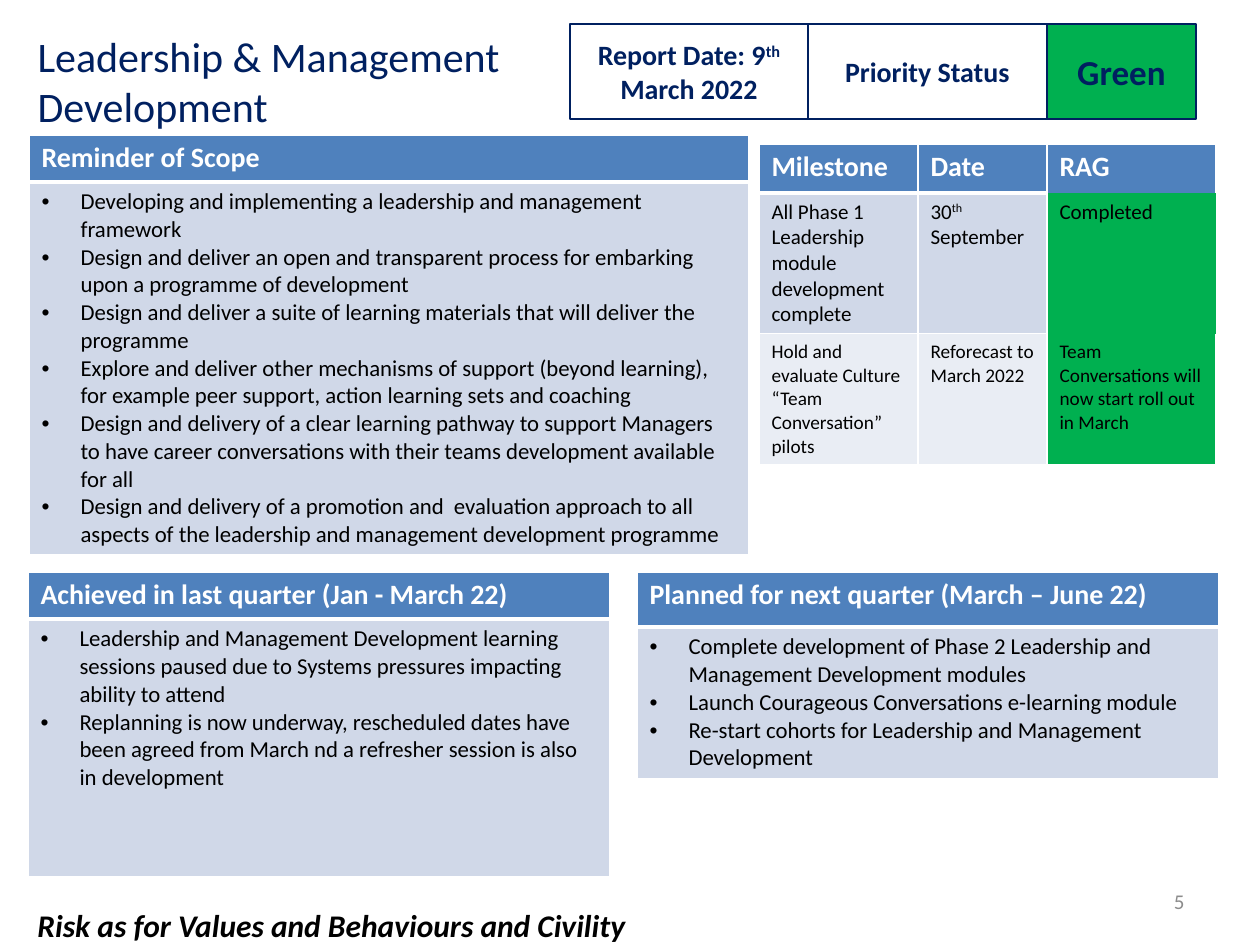
import pptx
import pptx.util
import pptx.dml.color
import pptx.enum.shapes
import pptx.enum.text
import pptx.oxml.ns
import lxml.etree

ALIGN = pptx.enum.text.PP_ALIGN
ANCHOR = pptx.enum.text.MSO_ANCHOR
COLOR = pptx.dml.color.RGBColor.from_string

THEME = {
    "font": "Calibri",
    "navy": "002060", "blue": "4F81BD", "band": "D0D8E8", "pale": "E9EDF4",
    "green": "00B050", "white": "FFFFFF", "black": "000000", "grey": "8C8C8C",
    "title": {"size": 24, "bold": False, "color": "navy"},
    "status": {"size": 16, "bold": True, "color": "navy"},
    "rating": {"size": 20, "bold": True, "color": "navy"},
    "header": {"size": 16, "bold": True, "color": "white"},
    "body": {"size": 13, "bold": False, "color": "black"},
    "milestone": {"size": 12, "bold": False, "color": "black"},
    "milestone_small": {"size": 11, "bold": False, "color": "black"},
    "number": {"size": 12, "bold": False, "color": "grey"},
    "risk": {"size": 18, "bold": True, "italic": True, "color": "black"},
}
INDENT = 39
FULL = {"L": 1, "R": 1, "T": 1, "B": 1}
HEADER_EDGE = {**FULL, "B": 3}
BODY_EDGE = {**FULL, "T": 3}

SCOPE = [
    "Developing and implementing a leadership and management framework",
    "Design and deliver an open and transparent process for embarking upon a programme of development",
    "Design and deliver a suite of learning materials that will deliver the programme",
    "Explore and deliver other mechanisms of support (beyond learning), for example peer support, action learning sets and coaching",
    "Design and delivery of a clear learning pathway to support Managers to have career conversations with their teams development available for all",
    "Design and delivery of a promotion and  evaluation approach to all aspects of the leadership and management development programme",
]
ACHIEVED = [
    "Leadership and Management Development learning sessions paused due to Systems pressures impacting ability to attend",
    "Replanning is now underway, rescheduled dates have been agreed from March nd a refresher session is also in development",
]
PLANNED = [
    "Complete development of Phase 2 Leadership and Management Development modules",
    "Launch Courageous Conversations e-learning module",
    "Re-start cohorts for Leadership and Management Development",
]


def px(n):
    return pptx.util.Emu(round(n * 914400 / 126))


def set_attrs(obj, values):
    for name, value in values.items():
        setattr(obj, name, value)


def sub(parent, tag, **attrs):
    return lxml.etree.SubElement(parent, pptx.oxml.ns.qn(tag), **attrs)


def write(tf, lines, style, align=ALIGN.LEFT, bullets=False):
    fmt = THEME[style]
    for i, line in enumerate(lines):
        p = tf.add_paragraph() if i else tf.paragraphs[0]
        p.alignment = align
        if bullets:
            ppr = p._p.get_or_add_pPr()
            ppr.set("marL", str(px(INDENT)))
            ppr.set("indent", str(-px(INDENT)))
            sub(ppr, "a:buFont", typeface="Arial")
            sub(ppr, "a:buChar", char="•")
        for j, part in enumerate(line.split("^")):
            r = p.add_run()
            r.text = part
            set_attrs(r.font, {
                "name": THEME["font"], "size": pptx.util.Pt(fmt["size"]),
                "bold": fmt["bold"], "italic": fmt.get("italic", False)})
            r.font.color.rgb = COLOR(THEME[fmt["color"]])
            if j % 2:
                r._r.get_or_add_rPr().set("baseline", "30000")


def add_title(s, box, lines):
    sp = s.shapes.title
    set_attrs(sp, dict(zip(("left", "top", "width", "height"), map(px, box))))
    set_attrs(sp.text_frame, {
        "vertical_anchor": ANCHOR.TOP, "word_wrap": True,
        "auto_size": pptx.enum.text.MSO_AUTO_SIZE.NONE})
    write(sp.text_frame, lines, "title")


def add_text(s, box, text, style, align=ALIGN.LEFT, anchor=ANCHOR.TOP, wrap=True):
    tf = s.shapes.add_textbox(*map(px, box)).text_frame
    set_attrs(tf, {"word_wrap": wrap, "vertical_anchor": anchor})
    write(tf, [text], style, align)


def add_status(s, box, text, style, fill=None):
    sp = s.shapes.add_shape(pptx.enum.shapes.MSO_SHAPE.RECTANGLE, *map(px, box))
    sp.shadow.inherit = False
    if fill:
        sp.fill.solid()
        sp.fill.fore_color.rgb = COLOR(THEME[fill])
    else:
        sp.fill.background()
    sp.line.color.rgb = COLOR(THEME["navy"])
    sp.line.width = pptx.util.Pt(1.5)
    set_attrs(sp.text_frame, {"word_wrap": True, "vertical_anchor": ANCHOR.MIDDLE})
    write(sp.text_frame, [text], style, ALIGN.CENTER)


def fill_cell(cell, lines, style, fill, edges, bullets=False):
    tcpr = cell._tc.get_or_add_tcPr()
    for side in "LRTB":
        width = edges.get(side, 0)
        ln = sub(tcpr, "a:ln" + side, w=str(pptx.util.Pt(width)))
        if width:
            sub(sub(ln, "a:solidFill"), "a:srgbClr", val=THEME["white"])
        else:
            sub(ln, "a:noFill")
    cell.fill.solid()
    cell.fill.fore_color.rgb = COLOR(THEME[fill])
    write(cell.text_frame, lines, style, bullets=bullets)


def add_table(s, left, top, widths, heights):
    box = map(px, (left, top, sum(widths), sum(heights)))
    table = s.shapes.add_table(len(heights), len(widths), *box).table
    for col, width in zip(table.columns, widths):
        col.width = px(width)
    for row, height in zip(table.rows, heights):
        row.height = px(height)
    return table


def add_panel(s, left, top, width, heights, heading, items):
    table = add_table(s, left, top, [width], heights)
    fill_cell(table.cell(0, 0), [heading], "header", "blue", HEADER_EDGE)
    fill_cell(table.cell(1, 0), items, "body", "band", BODY_EDGE, bullets=True)


def add_milestones(s):
    rows = [
        ("header", "blue", HEADER_EDGE, {"L": 1, "T": 1, "R": 1},
         ["Milestone", "Date", "RAG"]),
        ("milestone", "band", BODY_EDGE, {},
         ["All Phase 1 Leadership module development complete",
          "30^th^ September", "Completed"]),
        ("milestone_small", "pale", FULL, {"L": 1, "R": 1, "B": 1},
         ["Hold and evaluate Culture “Team Conversation” pilots",
          "Reforecast to March 2022",
          "Team Conversations will now start roll out in March"]),
    ]
    table = add_table(s, 759, 144, [159, 129, 169], [49, 138, 128])
    for i, (style, fill, edges, rag_edges, texts) in enumerate(rows):
        for j, text in enumerate(texts):
            rag = j == 2
            fill_cell(table.cell(i, j), [text], style,
                      "green" if rag and i else fill,
                      rag_edges if rag else edges)


def main():
    prs = pptx.Presentation()
    set_attrs(prs, {"slide_width": px(1260), "slide_height": px(945)})
    s = prs.slides.add_slide(prs.slide_layouts.get_by_name("Title Only"))

    add_title(s, (25, 24, 1171, 115), ["Leadership & Management", "Development"])
    add_status(s, (570, 24, 238, 95), "Report Date: 9^th^ March 2022", "status")
    add_status(s, (808, 24, 239, 95), "Priority Status", "status")
    add_status(s, (1047, 24, 149, 95), "Green", "rating", "green")

    add_panel(s, 29, 135, 720, [46, 368], "Reminder of Scope", SCOPE)
    add_milestones(s)
    add_panel(s, 28, 572, 582, [46, 258],
              "Achieved in last quarter (Jan - March 22)", ACHIEVED)
    add_panel(s, 637, 572, 582, [55, 149],
              "Planned for next quarter (March – June 22)", PLANNED)

    add_text(s, (903, 876, 294, 50), "5", "number", ALIGN.RIGHT, ANCHOR.MIDDLE)
    add_text(s, (25, 900, 624, 50), "Risk as for Values and Behaviours and Civility",
             "risk", wrap=False)
    prs.save("out.pptx")


if __name__ == "__main__":
    main()
